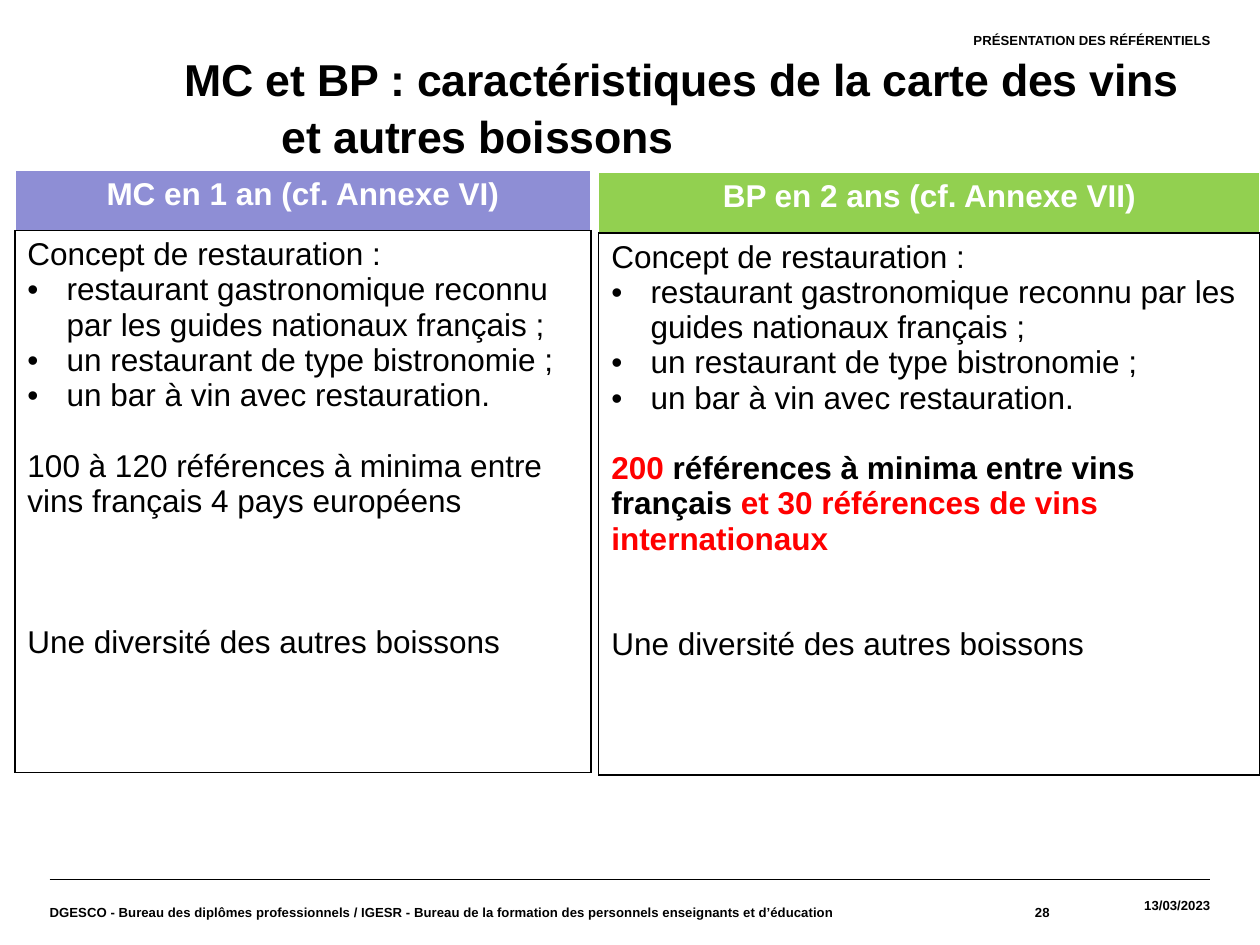
"""Build the slide comparing the MC and BP wine list requirements."""
from lxml.etree import SubElement
from pptx import Presentation
from pptx.dml.color import RGBColor
from pptx.enum.shapes import MSO_CONNECTOR
from pptx.enum.text import MSO_ANCHOR as Anchor, MSO_AUTO_SIZE as AutoSize, PP_ALIGN as Align
from pptx.oxml.ns import qn
from pptx.util import Cm, Pt

color = RGBColor.from_string
BLACK, WHITE, RED = "000000", "FFFFFF", "FF0000"
LINE_HEIGHT = 20.1


def add_run(para, text, size, hex_color=BLACK, bold=True):
    span = para.add_run()
    span.text = text
    span.font.name = "Arial"
    span.font.size = Pt(size)
    span.font.bold = bold
    span.font.color.rgb = color(hex_color)
    return span


def format_cell(cell, fill, borders):
    props = cell._tc.get_or_add_tcPr()
    for side, hex_color in zip("LRTB", borders):
        line = SubElement(props, qn(f"a:ln{side}"), w=str(Pt(1)))
        SubElement(SubElement(line, qn("a:solidFill")), qn("a:srgbClr"), val=hex_color)
    cell.fill.solid()
    cell.fill.fore_color.rgb = color(fill)


deck = Presentation()
deck.slide_width, deck.slide_height = Cm(25.4), Cm(19.05)
page = deck.slides.add_slide(deck.slide_layouts[5])

rule = page.shapes.add_connector(MSO_CONNECTOR.STRAIGHT, Cm(1), Cm(17.73), Cm(24.4), Cm(17.73))
rule.line.color.rgb = color(BLACK)
rule.line.width = Pt(0.8)
SubElement(rule._element.spPr, qn("a:effectLst"))

small_texts = [
    ("PRÉSENTATION DES RÉFÉRENTIELS", 9.2, 0.66, 15.2, 1.32, Align.RIGHT, Anchor.TOP),
    ("13/03/2023", 21.16, 17.73, 3.24, 1.02, Align.RIGHT, Anchor.MIDDLE),
    ("28", 17.4, 17.73, 3.76, 1.32, Align.RIGHT, Anchor.MIDDLE),
    ("DGESCO - Bureau des diplômes professionnels / IGESR - Bureau de la formation "
     "des personnels enseignants et d’éducation",
     1, 17.73, 16.4, 1.32, Align.LEFT, Anchor.MIDDLE),
]
for text, left, top, width, height, align, anchor in small_texts:
    box = page.shapes.add_textbox(Cm(left), Cm(top), Cm(width), Cm(height))
    frame = box.text_frame
    frame.word_wrap = True
    frame.vertical_anchor = anchor
    frame.margin_left = frame.margin_top = frame.margin_right = frame.margin_bottom = 0
    para = frame.paragraphs[0]
    para.alignment = align
    add_run(para, text, 7.5)

title = page.shapes.title
title.left, title.top, title.width, title.height = Cm(3.71), Cm(0.89), Cm(20.7), Cm(2.21)
frame = title.text_frame
frame.word_wrap = True
frame.auto_size = AutoSize.NONE
frame.vertical_anchor = Anchor.TOP
frame.margin_left = frame.margin_right = frame.margin_bottom = 0
frame.margin_top = Cm(0.06)
para = frame.paragraphs[0]
para.alignment = Align.LEFT
para.line_spacing = 1.08
props = para._p.get_or_add_pPr()
props.set("marL", str(Cm(1.97)))
props.set("indent", str(-Cm(1.97)))
span = add_run(para, "MC et BP : caractéristiques de la carte des vins et autres boissons", 25.5)
span.font._element.set("spc", "-10")

concept = [
    (0, False, [("Concept de restauration :", BLACK, False)]),
    (0, True, [("restaurant gastronomique reconnu par les guides nationaux français ;", BLACK, False)]),
    (0, True, [("un restaurant de type bistronomie ;", BLACK, False)]),
    (0, True, [("un bar à vin avec restauration.", BLACK, False)]),
]
mc_references = [("100 à 120 références à minima entre vins français 4 pays européens", BLACK, False)]
bp_references = [
    ("200 ", RED, True),
    ("références à minima entre vins français ", BLACK, True),
    ("et 30 références de vins internationaux", RED, True),
]
drinks = [("Une diversité des autres boissons", BLACK, False)]

programmes = [
    ("MC en 1 an (cf. Annexe VI)", "8E8ED5", 0.3, 3.43, 11.61, mc_references, 3),
    ("BP en 2 ans (cf. Annexe VII)", "92D050", 12.07, 3.48, 13.33, bp_references, 2),
]
for heading, fill, left, top, width, references, gap in programmes:
    table = page.shapes.add_table(2, 1, Cm(left), Cm(top), Cm(width), Cm(12.14)).table
    table.first_row = table.horz_banding = False
    table.rows[0].height, table.rows[1].height = Cm(1.22), Cm(10.92)

    header, body = table.cell(0, 0), table.cell(1, 0)
    format_cell(header, fill, [WHITE, WHITE, WHITE, BLACK])
    format_cell(body, WHITE, [BLACK] * 4)
    para = header.text_frame.paragraphs[0]
    para.alignment = Align.CENTER
    add_run(para, heading, 18, WHITE)

    content = concept + [(1, False, references), (gap, False, drinks)]
    for index, (lines_before, bulleted, runs) in enumerate(content):
        para = body.text_frame.add_paragraph() if index else body.text_frame.paragraphs[0]
        if lines_before:
            para.space_before = Pt(lines_before * LINE_HEIGHT)
        if bulleted:
            props = para._p.get_or_add_pPr()
            props.set("marL", str(Cm(0.79)))
            props.set("indent", str(-Cm(0.79)))
            SubElement(props, qn("a:buFont"), typeface="Arial")
            SubElement(props, qn("a:buChar"), char="•")
        for text, hex_color, bold in runs:
            add_run(para, text, 18, hex_color, bold)

deck.save("out.pptx")
